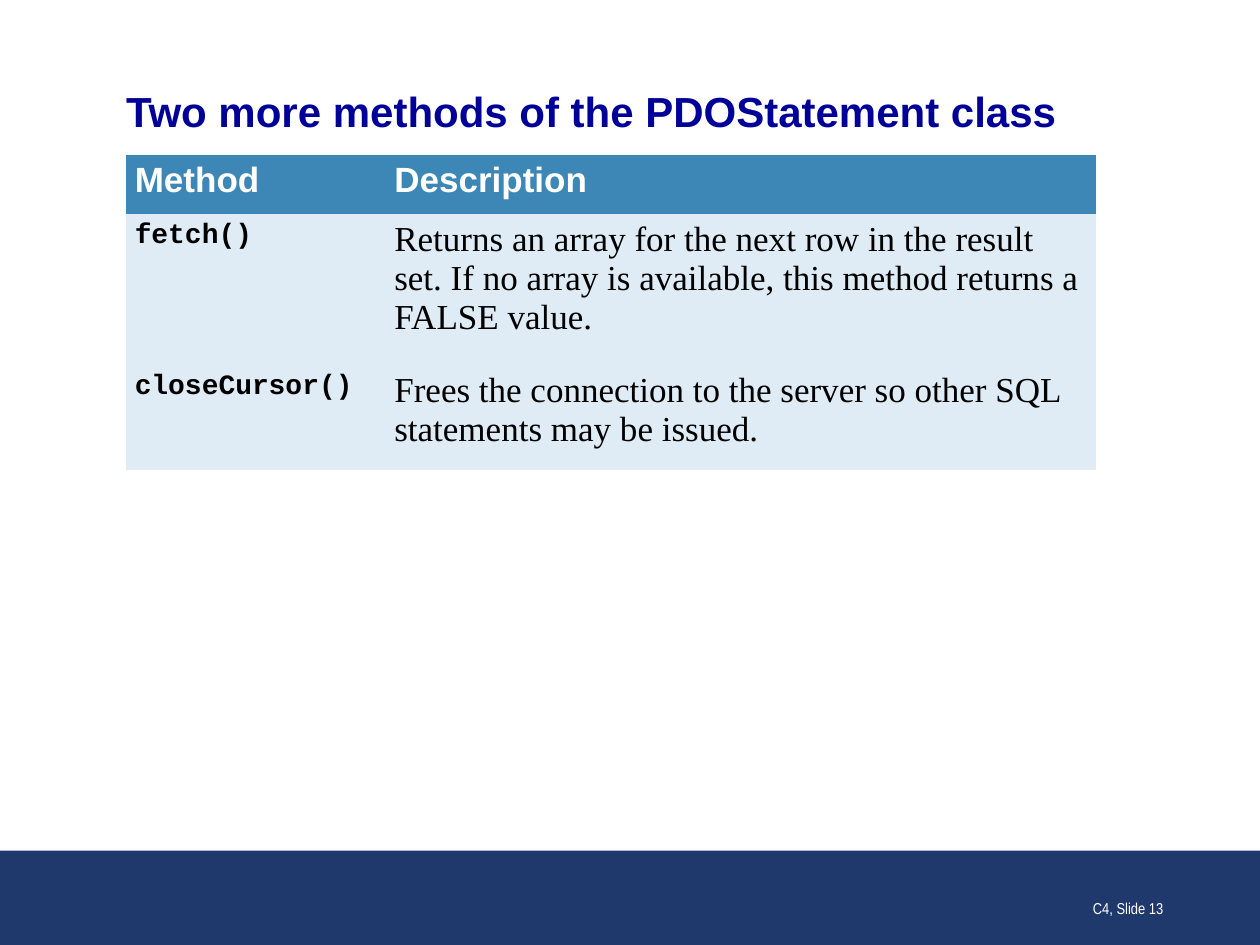
"""Build a slide with a table of two PDOStatement methods."""
from dataclasses import dataclass

from pptx import Presentation
from pptx.dml.color import RGBColor as RGB
from pptx.enum.shapes import MSO_SHAPE as Shape
from pptx.enum.text import MSO_ANCHOR as Anchor, MSO_AUTO_SIZE as AutoSize, PP_ALIGN as Align
from pptx.oxml.ns import qn
from pptx.util import Inches, Pt

TITLE = "Two more methods of the PDOStatement class"
HEADER = ("Method", "Description")
METHODS = [
    ("fetch()", "Returns an array for the next row in the result set. "
                "If no array is available, this method returns a FALSE value."),
    ("closeCursor()", "Frees the connection to the server so other SQL "
                      "statements may be issued."),
]
FOOTER = "C4, Slide 13"
COLUMN_WIDTHS = (2.06, 5.64)
ROW_HEIGHTS = (0.47, 1.2, 0.83)
SPACES_AFTER = (6, 6, 9)
NO_GRID_STYLE = "{2D5ABB26-0587-4C30-8999-92F81FD0307C}"


@dataclass(frozen=True)
class TextStyle:
    name: str
    size: int
    color: str
    bold: bool = False


class Theme:
    band = "20396D"
    header_fill = "3D87B7"
    body_fill = "DFECF5"
    title = TextStyle("Arial", 24, "000099", True)
    header = TextStyle("Arial", 20, "FFFFFF", True)
    method = TextStyle("Courier New", 16, "000000", True)
    description = TextStyle("Times New Roman", 20, "000000")
    footer = TextStyle("Arial Narrow", 9, "FFFFFF")


def write(frame, text, style, align=Align.LEFT, space_after=0):
    frame.word_wrap = True
    paragraph = frame.paragraphs[0]
    paragraph.text = text
    paragraph.alignment = align
    paragraph.space_before = Pt(0)
    paragraph.space_after = Pt(space_after)
    font = paragraph.font
    font.name, font.size, font.bold = style.name, Pt(style.size), style.bold
    font.color.rgb = RGB.from_string(style.color)


def add_band(slide, width):
    band = slide.shapes.add_shape(Shape.RECTANGLE, 0, Inches(6.75), width, Inches(0.75))
    band.shadow.inherit = False
    band.fill.solid()
    band.fill.fore_color.rgb = RGB.from_string(Theme.band)
    band.line.fill.background()


def format_title(title):
    title.left, title.top = Inches(1), Inches(0.68)
    title.width, title.height = Inches(8), Inches(0.4)
    frame = title.text_frame
    frame.margin_left = frame.margin_right = frame.margin_top = frame.margin_bottom = 0
    frame.vertical_anchor = Anchor.MIDDLE
    frame.auto_size = AutoSize.NONE
    write(frame, TITLE, Theme.title, space_after=6)


def add_method_table(slide):
    rows = [HEADER, *METHODS]
    table = slide.shapes.add_table(
        len(rows), len(HEADER), Inches(1), Inches(1.23),
        Inches(sum(COLUMN_WIDTHS)), Inches(sum(ROW_HEIGHTS))).table
    table.horz_banding = False
    table._tbl.tblPr.find(qn("a:tableStyleId")).text = NO_GRID_STYLE
    for column, width in zip(table.columns, COLUMN_WIDTHS):
        column.width = Inches(width)
    for row_index, (row, texts) in enumerate(zip(table.rows, rows)):
        row.height = Inches(ROW_HEIGHTS[row_index])
        is_header = row_index == 0
        styles = (Theme.header,) * 2 if is_header else (Theme.method, Theme.description)
        for cell, text, style in zip(row.cells, texts, styles):
            cell.margin_left = cell.margin_right = Inches(0.07)
            cell.margin_top = cell.margin_bottom = Inches(0.05)
            cell.fill.solid()
            cell.fill.fore_color.rgb = RGB.from_string(
                Theme.header_fill if is_header else Theme.body_fill)
            write(cell.text_frame, text, style, space_after=SPACES_AFTER[row_index])


def add_footer(slide):
    box = slide.shapes.add_textbox(Inches(7.25), Inches(6.83), Inches(2.08), Inches(0.5))
    box.text_frame.vertical_anchor = Anchor.BOTTOM
    write(box.text_frame, FOOTER, Theme.footer, Align.RIGHT)


def main():
    presentation = Presentation()
    presentation.slide_width, presentation.slide_height = Inches(10), Inches(7.5)
    slide = presentation.slides.add_slide(presentation.slide_layouts[5])
    add_band(slide, presentation.slide_width)
    format_title(slide.shapes.title)
    add_method_table(slide)
    add_footer(slide)
    presentation.save("out.pptx")


if __name__ == "__main__":
    main()
